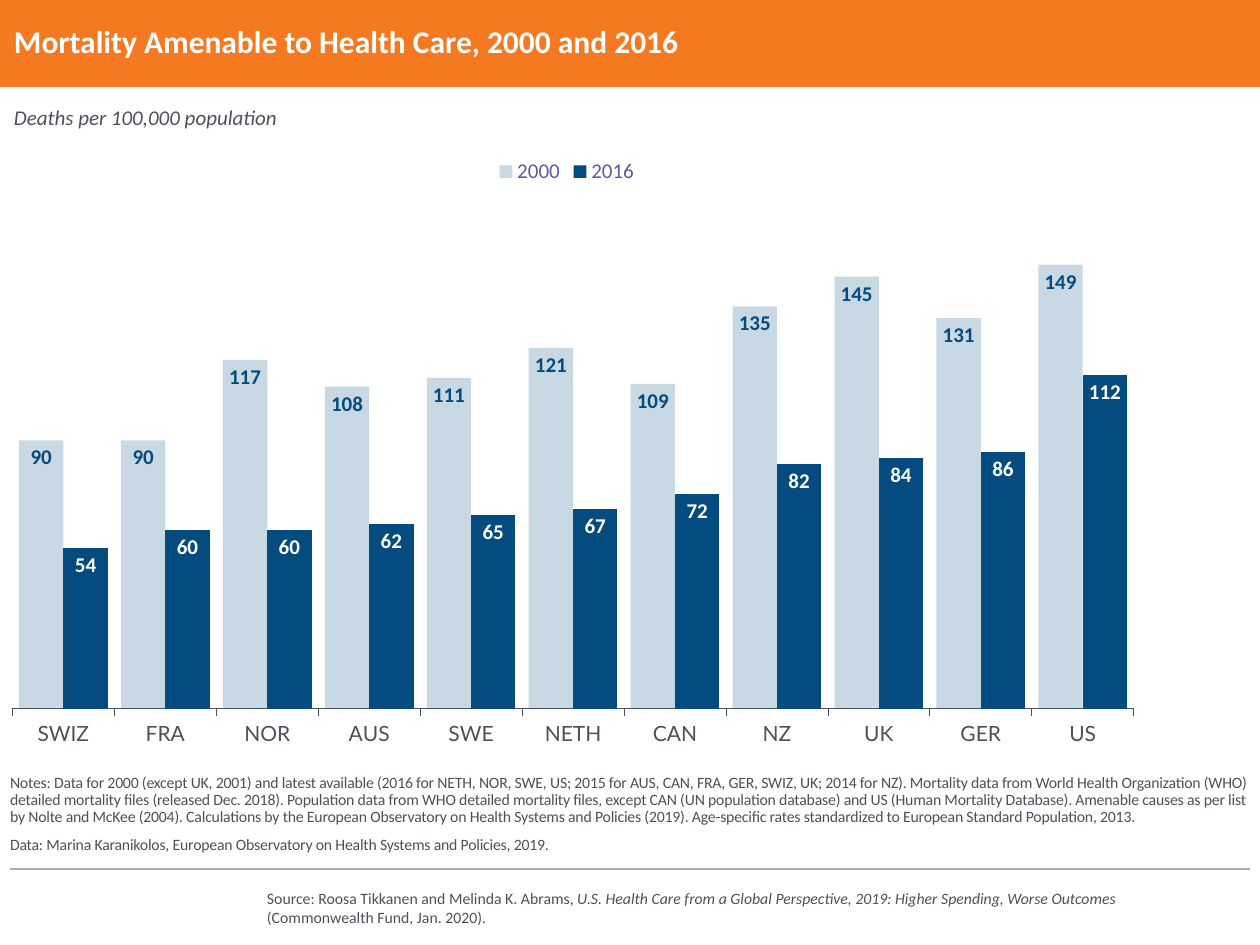
from lxml import etree
from pptx import Presentation
from pptx.chart.data import CategoryChartData
from pptx.dml.color import RGBColor
from pptx.enum.chart import XL_CHART_TYPE, XL_LABEL_POSITION, XL_LEGEND_POSITION, XL_TICK_MARK
from pptx.enum.shapes import MSO_CONNECTOR, MSO_SHAPE
from pptx.enum.text import MSO_ANCHOR, MSO_AUTO_SIZE, PP_ALIGN
from pptx.oxml import parse_xml
from pptx.oxml.ns import nsdecls, qn
from pptx.util import Emu, Pt

COLUMNS = XL_CHART_TYPE.COLUMN_CLUSTERED
INSIDE_END = XL_LABEL_POSITION.INSIDE_END
LEGEND_TOP = XL_LEGEND_POSITION.TOP
TICK_OUT, TICK_NONE = XL_TICK_MARK.OUTSIDE, XL_TICK_MARK.NONE
TOP, MIDDLE, BOTTOM = MSO_ANCHOR.TOP, MSO_ANCHOR.MIDDLE, MSO_ANCHOR.BOTTOM

ORANGE = RGBColor(0xF4, 0x79, 0x20)
GRAY = RGBColor(0xAB, 0xAB, 0xAB)
TEXT = RGBColor(0x4C, 0x51, 0x5A)
NAVY = RGBColor(0x04, 0x4C, 0x7F)
PURPLE = RGBColor(0x5F, 0x5A, 0x9D)
WHITE = RGBColor(0xFF, 0xFF, 0xFF)

W, H = 1260, 945
COUNTRIES = ["SWIZ", "FRA", "NOR", "AUS", "SWE", "NETH", "CAN", "NZ", "UK", "GER", "US"]
# name, values, opacity in percent, label colour
SERIES = [
    ("2000", [90, 90, 117, 108, 111, 121, 109, 135, 145, 131, 149], 21, NAVY),
    ("2016", [54, 60, 60, 62, 65, 67, 72, 82, 84, 86, 112], 100, WHITE),
]
PLOT = {"x": 0.011, "y": 0.137, "w": 0.989, "h": 0.752}
NOTES = [
    "Notes: Data for 2000 (except UK, 2001) and latest available (2016 for NETH, NOR, SWE, US; "
    "2015 for AUS, CAN, FRA, GER, SWIZ, UK; 2014 for NZ). Mortality data from World Health "
    "Organization (WHO) detailed mortality files (released Dec. 2018). Population data from WHO "
    "detailed mortality files, except CAN (UN population database) and US (Human Mortality "
    "Database). Amenable causes as per list by Nolte and McKee (2004). Calculations by the "
    "European Observatory on Health Systems and Policies (2019). Age-specific rates standardized "
    "to European Standard Population, 2013.",
    "Data: Marina Karanikolos, European Observatory on Health Systems and Policies, 2019.",
]
SOURCE = [
    ("Source: Roosa Tikkanen and Melinda K. Abrams, ", False),
    ("U.S. Health Care from a Global Perspective, 2019: Higher Spending, Worse Outcomes ", True),
    ("(Commonwealth Fund, Jan. 2020).", False),
]


def px(n):
    return Emu(round(n * 914400 / 126))


def set_font(font, size, color, name="Calibri", **fmt):
    font.color.rgb = color
    for key, value in {"size": Pt(size), "name": name, **fmt}.items():
        setattr(font, key, value)


def place(sp, box):
    for key, value in zip(("left", "top", "width", "height"), box):
        setattr(sp, key, px(value))


def set_frame(tf, anchor, margin=0):
    fmt = {"word_wrap": True, "auto_size": MSO_AUTO_SIZE.NONE, "vertical_anchor": anchor}
    for side in ("left", "top", "right", "bottom"):
        fmt["margin_" + side] = px(margin)
    for key, value in fmt.items():
        setattr(tf, key, value)


def add_header(s, box):
    x, y, w, h = box
    band = s.shapes.add_shape(MSO_SHAPE.RECTANGLE, *map(px, box))
    band.shadow.inherit = False
    band.fill.solid()
    band.fill.fore_color.rgb = ORANGE
    band.line.fill.background()
    s.shapes._spTree.insert(2, band._element)  # behind the title

    title = s.shapes.title
    place(title, (x + 14, y, w - 20, h))
    set_frame(title.text_frame, MIDDLE)
    p = title.text_frame.paragraphs[0]
    p.text = "Mortality Amenable to Health Care, 2000 and 2016"
    p.alignment, p.line_spacing = PP_ALIGN.LEFT, 0.9
    set_font(p.runs[0].font, 18, WHITE, bold=True)


def add_subtitle(s, box):
    tf = s.shapes.add_textbox(*map(px, box)).text_frame
    set_frame(tf, TOP)
    r = tf.paragraphs[0].add_run()
    r.text = "Deaths per 100,000 population"
    set_font(r.font, 12, TEXT, italic=True)


def style_series(ser, opacity, label_color):
    ser.format.fill.solid()
    ser.format.fill.fore_color.rgb = NAVY
    ser.invert_if_negative = False
    if opacity < 100:
        clr = ser._element.find(".//" + qn("a:srgbClr"))
        etree.SubElement(clr, qn("a:alpha")).set("val", str(opacity * 1000))
    labels = ser.data_labels
    fmt = {"show_value": True, "position": INSIDE_END,
           "number_format": "#,##0", "number_format_is_linked": False}
    for key, value in fmt.items():
        setattr(labels, key, value)
    set_font(labels.font, 12, label_color, bold=True)


def set_plot_layout(chart):
    plot_area = chart._chartSpace.chart.plotArea
    for old in plot_area.findall(qn("c:layout")):
        plot_area.remove(old)
    modes = '<c:xMode val="edge"/><c:yMode val="edge"/>'
    sizes = "".join(f'<c:{key} val="{value}"/>' for key, value in PLOT.items())
    plot_area.insert(0, parse_xml(
        f'<c:layout {nsdecls("c")}><c:manualLayout><c:layoutTarget val="inner"/>'
        f'{modes}{sizes}</c:manualLayout></c:layout>'))


def add_mortality_chart(s, box):
    data = CategoryChartData(number_format="#,##0")
    data.categories = COUNTRIES
    for name, values, *_ in SERIES:
        data.add_series(name, values)
    chart = s.shapes.add_chart(COLUMNS, *map(px, box), data).chart
    chart.has_title = False
    set_font(chart.font, 10, PURPLE, "Lato")

    chart.has_legend = True
    chart.legend.position = LEGEND_TOP
    chart.legend.include_in_layout = False
    set_font(chart.legend.font, 12, PURPLE)

    plot = chart.plots[0]
    plot.gap_width, plot.overlap, plot.vary_by_categories = 30, 0, False
    for ser, (*_, opacity, label_color) in zip(plot.series, SERIES):
        style_series(ser, opacity, label_color)

    axis = chart.category_axis
    axis.major_tick_mark, axis.minor_tick_mark = TICK_OUT, TICK_NONE
    axis.format.line.color.rgb = TEXT
    axis.format.line.width = Pt(0.3)
    set_font(axis.tick_labels.font, 12, TEXT, "Lato")

    axis = chart.value_axis
    axis.minimum_scale, axis.maximum_scale = 0, 160
    axis.has_major_gridlines = axis.visible = False
    set_plot_layout(chart)


def add_notes(s, box):
    body = s.placeholders[1]
    place(body, box)
    tf = body.text_frame
    set_frame(tf, BOTTOM)
    for i, text in enumerate(NOTES):
        p = tf.add_paragraph() if i else tf.paragraphs[0]
        pPr = p._p.get_or_add_pPr()
        pPr.set("marL", "0")
        pPr.set("indent", "0")
        etree.SubElement(pPr, qn("a:buNone"))
        p.line_spacing, p.space_before, p.space_after = 0.9, Pt(0), Pt(6)
        r = p.add_run()
        r.text = text
        set_font(r.font, 9, TEXT)
        r.font._element.set("spc", "-10")  # slightly tightened letters


def add_source(s, box):
    x, y, w, h = box
    # Rule above the source
    rule = s.shapes.add_connector(MSO_CONNECTOR.STRAIGHT, px(W - 10), px(y), px(10), px(y))
    rule.line.color.rgb = GRAY
    rule.line.width = Pt(0.75)
    etree.SubElement(rule._element.spPr, qn("a:effectLst"))

    tf = s.shapes.add_textbox(px(x), px(y + 14), px(w), px(h - 14)).text_frame
    set_frame(tf, TOP, 6)
    tf.margin_left = tf.margin_right = px(13)
    for text, italic in SOURCE:
        r = tf.paragraphs[0].add_run()
        r.text = text
        set_font(r.font, 9, TEXT, italic=italic)


def main():
    prs = Presentation()
    prs.slide_width, prs.slide_height = px(W), px(H)
    s = prs.slides.add_slide(prs.slide_layouts[1])
    add_header(s, (0, 0, W, 87))
    add_mortality_chart(s, (0, 145, 1134, 634))
    add_notes(s, (10, 767, 1240, 87))
    add_subtitle(s, (14, 105, 606, 25))
    add_source(s, (254, 869, 951, 65))
    prs.save("out.pptx")


if __name__ == "__main__":
    main()
